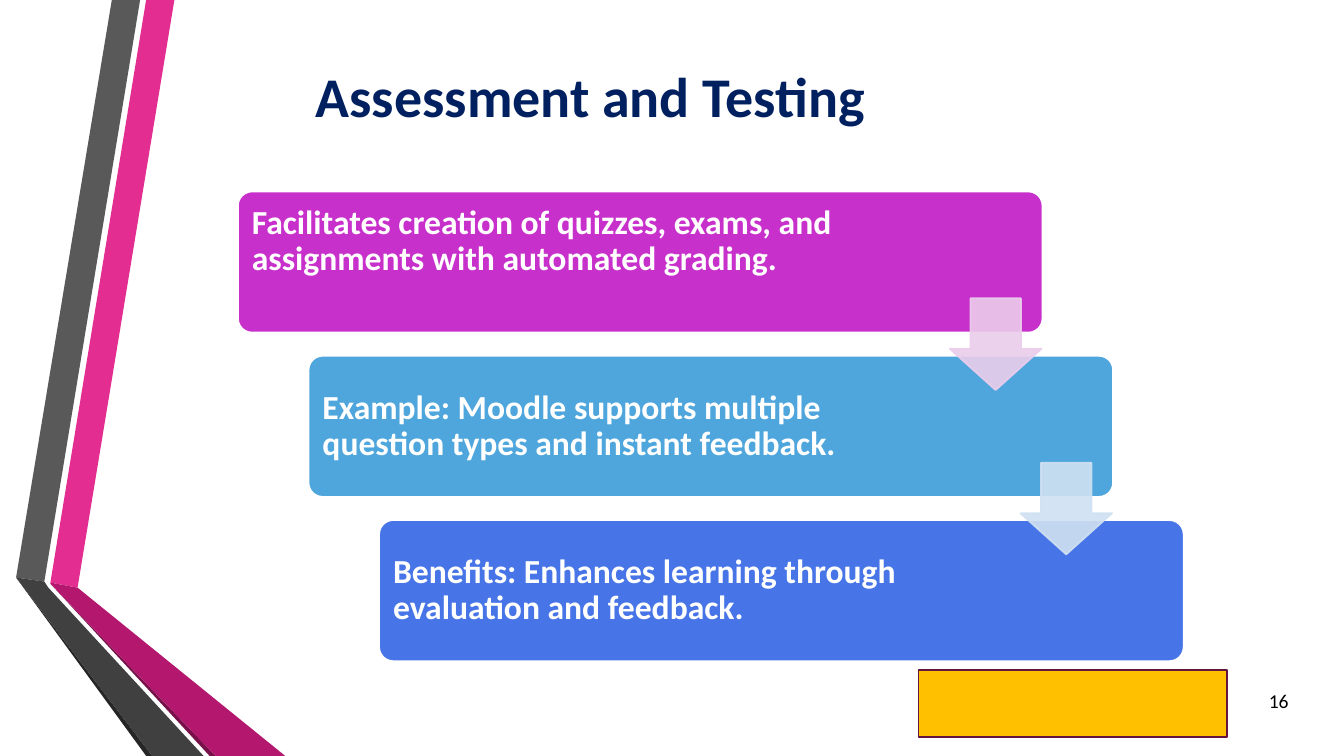
from dataclasses import dataclass

from lxml.etree import SubElement
from pptx import Presentation
from pptx.dml.color import RGBColor
from pptx.enum.shapes import MSO_SHAPE
from pptx.enum.text import MSO_ANCHOR, PP_ALIGN
from pptx.oxml.ns import qn
from pptx.util import Inches, Pt


@dataclass(frozen=True)
class Theme:
    """Colours, font and type sizes of the slide."""
    font: str = "Calibri"
    title_size: int = 40
    body_size: int = 24
    number_size: int = 14
    line_width: float = 1.25
    navy: str = "002060"
    black: str = "000000"
    white: str = "FFFFFF"
    pink: str = "E32D91"
    deep_pink: str = "B4186E"
    dark_pink: str = "781049"
    gray: str = "595959"
    deep_gray: str = "404040"
    dark_gray: str = "262626"
    gold: str = "FFC000"
    plum: str = "631440"
    purple: str = "C830CC"
    sky: str = "4EA6DC"
    blue: str = "4775E7"
    pale_purple: str = "EBCDEC"
    pale_sky: str = "D0E1F2"


THEME = Theme()

RIBBONS = [
    (THEME.pink, [(0.5, 5.78), (0.77, 5.83), (1.73, 0), (1.45, 0)]),
    (THEME.gray, [(1.39, 0), (1.11, 0), (0.16, 5.73), (0.44, 5.77)]),
    (THEME.dark_gray, [(0.16, 5.73), (1.45, 7.5), (1.51, 7.5)]),
    (THEME.dark_pink, [(0.5, 5.79), (2.08, 7.5), (2.14, 7.5)]),
    (THEME.deep_pink, [(0.5, 5.79), (2.14, 7.5), (2.83, 7.5), (0.77, 5.83), (0.5, 5.78)]),
    (THEME.deep_gray, [(2.02, 7.5), (0.48, 5.83), (0.44, 5.77), (0.16, 5.73), (1.51, 7.5)]),
]

STEPS = [
    ("Facilitates creation of quizzes, exams, and assignments with automated grading.",
     THEME.purple, 6.47, MSO_ANCHOR.TOP),
    ("Example: Moodle supports multiple question types and instant feedback.",
     THEME.sky, 6.28, MSO_ANCHOR.MIDDLE),
    ("Benefits: Enhances learning through evaluation and feedback.",
     THEME.blue, 6.28, MSO_ANCHOR.MIDDLE),
]
STEP_LEFT, STEP_TOP = 2.36, 1.9
STEP_RIGHT, STEP_DOWN = 0.7, 1.63


def set_alpha(color_format_fill, percent):
    """Make a solid fill partly transparent."""
    color = color_format_fill.find(f".//{qn('a:srgbClr')}")
    SubElement(color, qn("a:alpha")).set("val", str(percent * 1000))


def add_ribbon(page, color, points):
    """Draw one closed flat outline."""
    corners = [(Inches(x), Inches(y)) for x, y in points]
    builder = page.shapes.build_freeform(*corners[0], scale=1.0)
    builder.add_line_segments(corners[1:], close=True)
    ribbon = builder.convert_to_shape()
    ribbon.shadow.inherit = False
    ribbon.fill.solid()
    ribbon.fill.fore_color.rgb = RGBColor.from_string(color)
    ribbon.line.fill.background()


def add_block(page, kind, frame, fill, line, adjustments=()):
    """Draw a filled and outlined preset shape."""
    block = page.shapes.add_shape(kind, *map(Inches, frame))
    block.shadow.inherit = False
    block.fill.solid()
    block.fill.fore_color.rgb = RGBColor.from_string(fill)
    block.line.color.rgb = RGBColor.from_string(line)
    block.line.width = Pt(THEME.line_width)
    for index, value in enumerate(adjustments):
        block.adjustments[index] = value
    return block


def add_text(page, frame, text, size, color, align=PP_ALIGN.LEFT,
             anchor=MSO_ANCHOR.MIDDLE, bold=True, inset=None, spacing=None):
    """Place one paragraph in a wrapping text box."""
    box = page.shapes.add_textbox(*map(Inches, frame))
    body = box.text_frame
    body.word_wrap = True
    body.vertical_anchor = anchor
    if inset is not None:
        body.margin_left = body.margin_right = Inches(inset)
        body.margin_top = body.margin_bottom = Inches(inset)
    body.text = text
    para = body.paragraphs[0]
    para.alignment = align
    if spacing:
        para.line_spacing = spacing
    span = para.runs[0]
    span.font.name = THEME.font
    span.font.size = Pt(size)
    span.font.bold = bold
    span.font.color.rgb = RGBColor.from_string(color)


def add_step(page, index, text, color, text_width, anchor):
    """Draw one stair of the process with its text."""
    left = STEP_LEFT + index * STEP_RIGHT
    top = STEP_TOP + index * STEP_DOWN
    add_block(page, MSO_SHAPE.ROUNDED_RECTANGLE, (left, top, 7.98, 1.4),
              color, THEME.white, [0.1])
    add_text(page, (left + 0.04, top + 0.04, text_width, 1.32), text,
             THEME.body_size, THEME.white, anchor=anchor, inset=0.1, spacing=0.9)


def add_step_arrow(page, index, color):
    """Draw the translucent arrow from one stair to the next."""
    left = STEP_LEFT + index * STEP_RIGHT + 7.06
    top = STEP_TOP + index * STEP_DOWN + 1.06
    arrow = add_block(page, MSO_SHAPE.DOWN_ARROW, (left, top, 0.91, 0.91),
                      color, color, [0.45, 0.55])
    properties = arrow.element.spPr
    set_alpha(properties.find(qn("a:solidFill")), 90)
    set_alpha(properties.find(qn("a:ln")), 90)
    arrow.adjustments[0] = 0.55
    arrow.adjustments[1] = 0.45


def main():
    """Build the slide and save it."""
    deck = Presentation()
    deck.slide_width, deck.slide_height = Inches(13.33), Inches(7.5)
    page = deck.slides.add_slide(deck.slide_layouts[6])
    for color, points in RIBBONS:
        add_ribbon(page, color, points)
    add_block(page, MSO_SHAPE.RECTANGLE, (9.11, 6.65, 3.06, 0.66), THEME.gold, THEME.plum)
    add_text(page, (1.64, 0.35, 8.43, 1.18), "Assessment and Testing",
             THEME.title_size, THEME.navy, align=PP_ALIGN.CENTER)
    add_text(page, (12.28, 6.75, 0.6, 0.4), "16", THEME.number_size, THEME.black,
             align=PP_ALIGN.RIGHT, bold=False)
    for index, step in enumerate(STEPS):
        add_step(page, index, *step)
    for index, color in enumerate([THEME.pale_purple, THEME.pale_sky]):
        add_step_arrow(page, index, color)
    deck.save("out.pptx")


if __name__ == "__main__":
    main()
